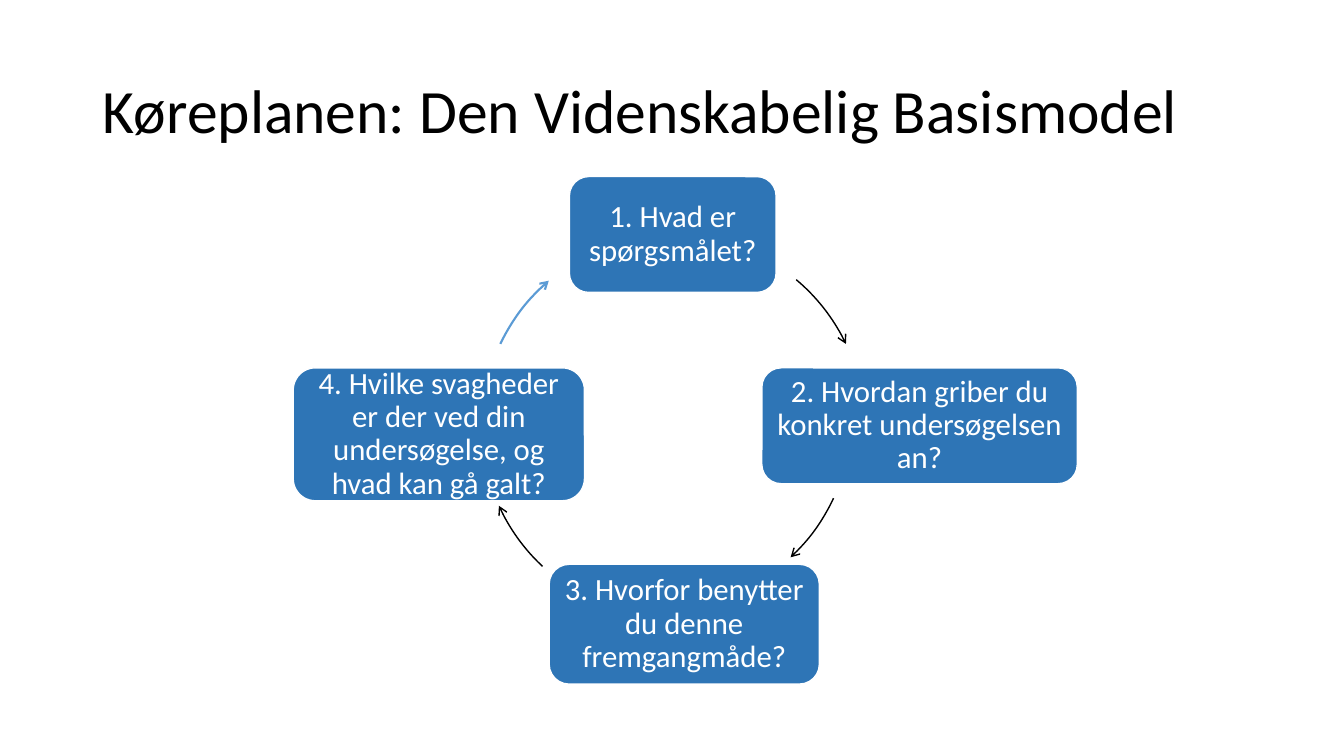
from pptx import Presentation, util as u
from pptx.dml.color import RGBColor
from pptx.enum import shapes, text
from pptx.oxml import ns
from lxml import etree

BLUE = RGBColor(0x2E, 0x75, 0xB6)
SKY = RGBColor(0x5B, 0x9B, 0xD5)
BLACK = RGBColor(0, 0, 0)
WHITE = RGBColor(255, 255, 255)


def write(frame, words, size, color, align):
    frame.text = words
    frame.word_wrap = True
    frame.auto_size = text.MSO_AUTO_SIZE.NONE
    frame.vertical_anchor = text.MSO_ANCHOR.MIDDLE
    para = frame.paragraphs[0]
    para.alignment = align
    para.line_spacing = 0.9
    font = para.runs[0].font
    font.name = "Calibri"
    font.size = u.Pt(size)
    font.color.rgb = color


deck = Presentation()
deck.slide_width, deck.slide_height = u.Cm(33.87), u.Cm(19.05)
slide = deck.slides.add_slide(deck.slide_layouts[5])

# Title
title = slide.shapes.title
title.left, title.top = u.Cm(2.34), u.Cm(1.02)
title.width, title.height = u.Cm(29.21), u.Cm(3.68)
write(title.text_frame, "Køreplanen: Den Videnskabelig Basismodel", 44,
      BLACK, text.PP_ALIGN.LEFT)

# Steps of the cycle: left, top, width, height, wording
steps = [
    (14.35, 4.45, 5.21, 2.92, "1. Hvad er spørgsmålet?"),
    (19.2, 9.27, 7.95, 2.92, "2. Hvordan griber du konkret undersøgelsen an?"),
    (13.84, 14.22, 6.81, 3.02, "3. Hvorfor benytter du denne fremgangmåde?"),
    (7.39, 9.27, 7.34, 3.35,
     "4. Hvilke svagheder er der ved din undersøgelse, og hvad kan gå galt?"),
]
for left, top, width, height, words in steps:
    box = slide.shapes.add_shape(
        shapes.MSO_SHAPE.ROUNDED_RECTANGLE,
        u.Cm(left), u.Cm(top), u.Cm(width), u.Cm(height))
    box.shadow.inherit = False
    box.fill.solid()
    box.fill.fore_color.rgb = BLUE
    box.line.color.rgb = WHITE
    box.line.width = u.Pt(1)
    frame = box.text_frame
    frame.margin_left = frame.margin_right = u.Cm(0.22)
    frame.margin_top = frame.margin_bottom = u.Cm(0.22)
    write(frame, words, 22, WHITE, text.PP_ALIGN.CENTER)

# Arrows along the circle: left, top, start and end in degrees, colour, weight
SIZE = u.Cm(9.65)
arrows = [
    (12.14, 5.92, 310, 334.5, BLACK, 1),
    (11.81, 5.69, 25, 47, BLACK, 1),
    (12.14, 5.92, 133, 155.5, BLACK, 1),
    (12.14, 5.92, 205.5, 229.5, SKY, 1.5),
]
for left, top, start, end, color, weight in arrows:
    arc = slide.shapes.add_shape(
        shapes.MSO_SHAPE.ARC, u.Cm(left), u.Cm(top), SIZE, SIZE)
    # Angles are stored in 60000ths of a degree, adjustments in 100000ths
    arc.adjustments[0] = start * 0.6
    arc.adjustments[1] = end * 0.6
    arc.shadow.inherit = False
    arc.fill.background()
    arc.line.color.rgb = color
    arc.line.width = u.Pt(weight)
    line = arc.element.spPr.find(ns.qn("a:ln"))
    etree.SubElement(line, ns.qn("a:tailEnd"), type="arrow")

deck.save("out.pptx")
